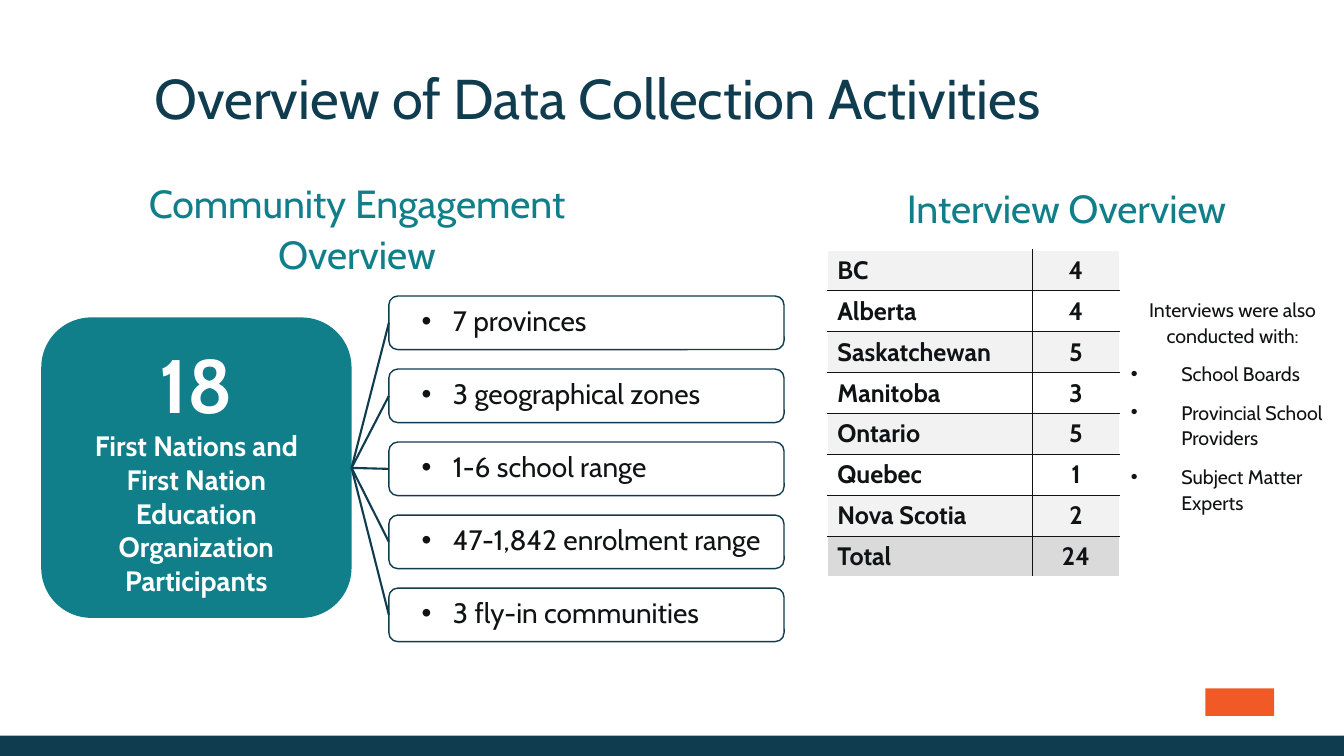
from dataclasses import dataclass

from lxml.etree import SubElement
from pptx import Presentation
from pptx.dml.color import RGBColor
from pptx.enum.shapes import MSO_CONNECTOR as Connector, MSO_SHAPE as Shape
from pptx.enum.text import MSO_ANCHOR as Anchor, PP_ALIGN as Align
from pptx.oxml.ns import qn
from pptx.oxml.xmlchemy import OxmlElement
from pptx.util import Cm, Pt


@dataclass(frozen=True)
class Theme:
    font: str = "Cabin"
    navy: str = "0F3C4F"
    teal: str = "107F8A"
    orange: str = "EF5A27"
    ink: str = "0F1313"
    white: str = "FFFFFF"
    band: str = "F2F2F2"
    total: str = "DADADA"
    title: int = 40
    heading: int = 28
    figure: int = 54
    body: int = 20
    table: int = 18
    note: int = 14


THEME = Theme()
FACTS = ["7 provinces", "3 geographical zones", "1-6 school range",
         "47-1,842 enrolment range", "3 fly-in communities"]
INTERVIEWS = [("BC", 4), ("Alberta", 4), ("Saskatchewan", 5), ("Manitoba", 3),
              ("Ontario", 5), ("Quebec", 1), ("Nova Scotia", 2), ("Total", 24)]
OTHER_GROUPS = ["School Boards", "Provincial School Providers", "Subject Matter Experts"]


def rgb(colour):
    return RGBColor.from_string(colour)


def write(para, text, size, colour, bold=False, align=Align.LEFT, spacing=None):
    para.alignment = align
    if spacing:
        para.line_spacing = spacing
    span = para.add_run()
    span.text = text
    span.font.name = THEME.font
    span.font.size = Pt(size)
    span.font.bold = bold
    span.font.color.rgb = rgb(colour)


def add_bullet(para, indent):
    props = para._p.get_or_add_pPr()
    props.set("marL", str(Cm(indent)))
    props.set("indent", str(-Cm(indent)))
    SubElement(props, qn("a:buFont")).set("typeface", "Arial")
    SubElement(props, qn("a:buChar")).set("char", "•")


def set_frame(frame, margins, anchor=Anchor.TOP):
    """Wrap the text and set left, top, right and bottom margins in cm."""
    frame.word_wrap = True
    frame.vertical_anchor = anchor
    (frame.margin_left, frame.margin_top,
     frame.margin_right, frame.margin_bottom) = map(Cm, margins)
    return frame


def add_text_box(page, place, margins=(0, 0, 0, 0)):
    box = page.shapes.add_textbox(*map(Cm, place))
    return set_frame(box.text_frame, margins)


def add_block(page, kind, place, fill, outline=None):
    block = page.shapes.add_shape(kind, *map(Cm, place))
    block.shadow.inherit = False
    block.fill.solid()
    block.fill.fore_color.rgb = rgb(fill)
    if outline:
        block.line.color.rgb = rgb(outline)
        block.line.width = Pt(1)
    else:
        block.line.fill.background()
    return block


def add_line(page, start, end, colour, width):
    line = page.shapes.add_connector(Connector.STRAIGHT, *map(Cm, start + end))
    line.line.color.rgb = rgb(colour)
    line.line.width = Pt(width)
    SubElement(line._element.spPr, qn("a:effectLst"))


def add_footer(page):
    add_block(page, Shape.RECTANGLE, (30.38, 17.35, 1.73, 0.69), THEME.orange)
    add_block(page, Shape.RECTANGLE, (0, 18.54, 33.87, 0.51), THEME.navy)


def add_title(page, text):
    title = page.shapes.title
    title.left, title.top, title.width, title.height = map(Cm, (3.89, 1.8, 28.09, 1.55))
    frame = set_frame(title.text_frame, (0, 0, 0, 0))
    write(frame.paragraphs[0], text, THEME.title, THEME.navy, spacing=0.9)


def add_heading(page, text, place, right_margin):
    frame = add_text_box(page, place, (0, 0, right_margin, 0))
    write(frame.paragraphs[0], text, THEME.heading, THEME.teal,
          align=Align.CENTER, spacing=1.1)


def add_fact(page, text, place):
    card = add_block(page, Shape.ROUNDED_RECTANGLE, place, THEME.white, THEME.navy)
    colour = card._element.spPr.find(qn("a:solidFill"))[0]
    SubElement(colour, qn("a:alpha")).set("val", "90000")
    frame = set_frame(card.text_frame, (0.76, 0.15, 0.15, 0.15), Anchor.MIDDLE)
    para = frame.paragraphs[0]
    add_bullet(para, 0.79)
    write(para, text, THEME.body, THEME.ink, spacing=0.9)


def add_engagement(page):
    """Participant block with a fan of lines to its facts."""
    left, top, width, height, pitch = 9.8, 7.46, 9.96, 1.35, 1.84
    for index, fact in enumerate(FACTS):
        add_fact(page, fact, (left, top + index * pitch, width, height))

    block = add_block(page, Shape.ROUNDED_RECTANGLE, (1.04, 8, 7.82, 7.57), THEME.teal)
    frame = set_frame(block.text_frame, (0.25, 0.13, 0.25, 0.13), Anchor.MIDDLE)
    write(frame.paragraphs[0], "18", THEME.figure, THEME.white, True, Align.CENTER)
    write(frame.add_paragraph(),
          "First Nations and First Nation Education Organization Participants",
          THEME.body, THEME.white, True, Align.CENTER)

    for index in range(len(FACTS)):
        middle = top + index * pitch + height / 2
        add_line(page, (8.86, 11.79), (left, middle), THEME.navy, 1.5)


def set_borders(cell, colours):
    """Draw left, right, top and bottom cell borders in the given colours."""
    props = cell._tc.get_or_add_tcPr()
    for index, (side, colour) in enumerate(zip("LRTB", colours)):
        border = OxmlElement(f"a:ln{side}")
        border.set("w", str(Pt(1)))
        fill = SubElement(border, qn("a:solidFill"))
        SubElement(fill, qn("a:srgbClr")).set("val", colour)
        props.insert(index, border)


def add_interview_table(page):
    row_height, widths = 1.03, (5.16, 2.21)
    last = len(INTERVIEWS) - 1
    table = page.shapes.add_table(
        len(INTERVIEWS), 2, Cm(20.85), Cm(6.3),
        Cm(sum(widths)), Cm(row_height * len(INTERVIEWS))).table
    for column, width in zip(table.columns, widths):
        column.width = Cm(width)
    for index, values in enumerate(INTERVIEWS):
        table.rows[index].height = Cm(row_height)
        fill = THEME.total if index == last else (THEME.band, THEME.white)[index % 2]
        top = THEME.white if index == 0 else THEME.ink
        bottom = THEME.white if index == last else THEME.ink
        sides = ((THEME.white, THEME.ink), (THEME.ink, THEME.white))
        for column, value in enumerate(values):
            cell = table.cell(index, column)
            cell.fill.solid()
            cell.fill.fore_color.rgb = rgb(fill)
            set_borders(cell, sides[column] + (top, bottom))
            write(cell.text_frame.paragraphs[0], str(value), THEME.table, THEME.ink,
                  True, (Align.LEFT, Align.CENTER)[column])


def add_other_interviews(page):
    frame = add_text_box(page, (28.5, 7.44, 5.13, 5.51))
    write(frame.paragraphs[0], "Interviews were also conducted with:", THEME.note,
          THEME.ink, align=Align.CENTER, spacing=1.1)
    for group in OTHER_GROUPS:
        para = frame.add_paragraph()
        add_bullet(para, 1.27)
        para.space_before = Pt(9)
        write(para, group, THEME.note, THEME.ink, spacing=1.1)


def main():
    deck = Presentation()
    deck.slide_width, deck.slide_height = Cm(33.87), Cm(19.05)
    page = deck.slides.add_slide(deck.slide_layouts[5])
    add_footer(page)
    add_title(page, "Overview of Data Collection Activities")
    add_interview_table(page)
    add_heading(page, "Community Engagement Overview", (1.78, 4.39, 14.96, 2.54), 0.53)
    add_heading(page, "Interview Overview", (19.48, 4.52, 14.99, 1.22), 0.2)
    add_engagement(page)
    add_other_interviews(page)
    deck.save("out.pptx")


if __name__ == "__main__":
    main()
